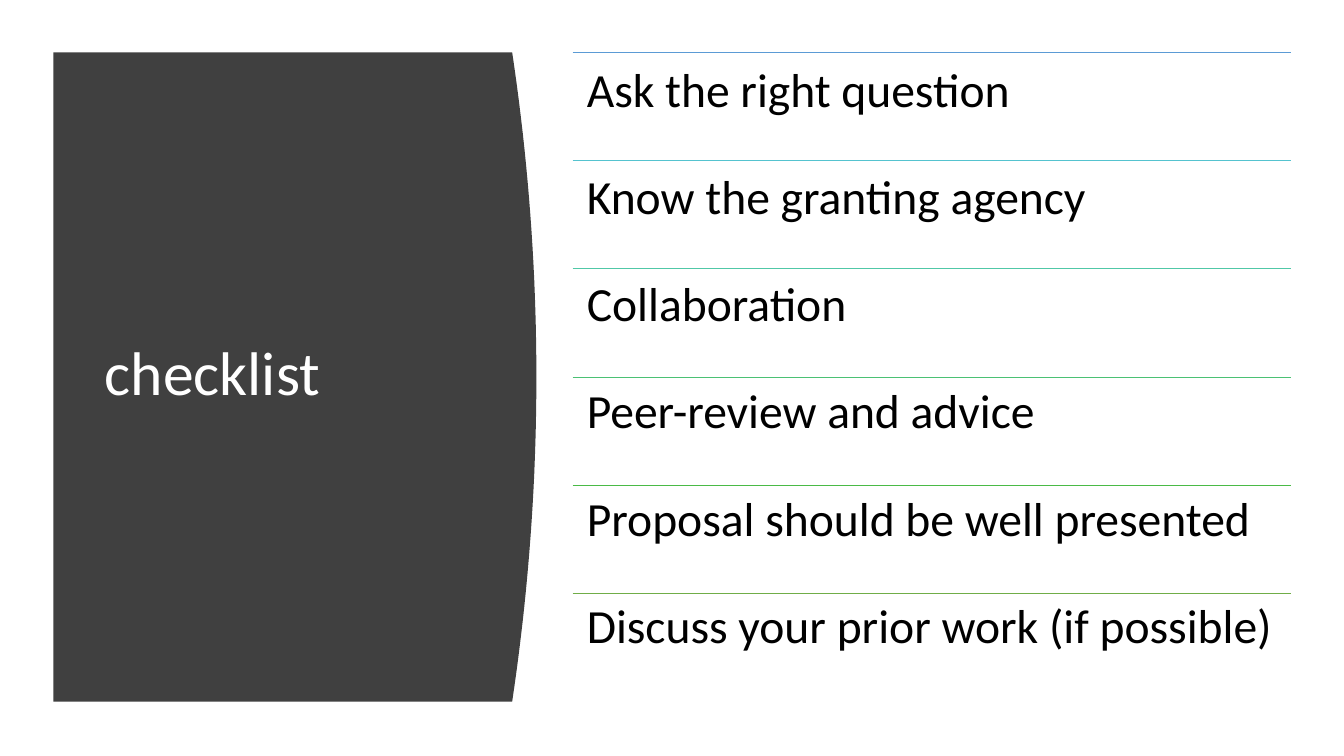
from dataclasses import dataclass

from lxml.etree import SubElement
from pptx import Presentation
from pptx.dml.color import RGBColor
from pptx.enum.shapes import MSO_CONNECTOR
from pptx.enum.text import MSO_ANCHOR, MSO_AUTO_SIZE, PP_ALIGN
from pptx.oxml.ns import qn
from pptx.shapes.placeholder import SlidePlaceholder
from pptx.slide import Slide
from pptx.text.text import _Paragraph as Paragraph
from pptx.util import Inches, Pt


@dataclass(frozen=True)
class Theme:
    font: str = "Calibri"
    panel: str = "404040"
    title: str = "FFFFFF"
    item: str = "000000"
    title_size: float = 44
    item_size: float = 34
    item_gap: float = 39.8
    rule_width: float = 0.5
    line_spacing: float = 0.9


@dataclass(frozen=True)
class Box:
    left: float
    top: float
    width: float
    height: float


@dataclass(frozen=True)
class Item:
    text: str
    rule_color: str


THEME = Theme()
PANEL = Box(0.53, 0.52, 4.79, 6.44)
TITLE = Box(0.94, 1.11, 3.74, 5.24)
CHECKLIST = Box(5.68, 0.52, 7.12, 6.44)
BULGE = 0.24
CURVE_STEPS = 40
ITEM_INSET = 0.14
ITEMS = [
    Item("Ask the right question", "5B9BD5"),
    Item("Know the granting agency", "55C3CF"),
    Item("Collaboration", "50C8A7"),
    Item("Peer-review and advice", "4BC174"),
    Item("Proposal should be well presented", "4ABA46"),
    Item("Discuss your prior work (if possible)", "70AD47"),
]


def draw_panel(slide: Slide) -> None:
    right = PANEL.left + PANEL.width
    bottom = PANEL.top + PANEL.height
    outline = [(PANEL.left, PANEL.top)]
    for step in range(CURVE_STEPS + 1):
        share = step / CURVE_STEPS
        inset = BULGE * (2 * share - 1) ** 2
        outline.append((right - inset, PANEL.top + PANEL.height * share))
    outline.append((PANEL.left, bottom))
    start, *corners = [(Inches(x), Inches(y)) for x, y in outline]
    builder = slide.shapes.build_freeform(*start)
    builder.add_line_segments(corners, close=True)
    panel = builder.convert_to_shape()
    panel.shadow.inherit = False
    panel.fill.solid()
    panel.fill.fore_color.rgb = RGBColor.from_string(THEME.panel)
    panel.line.fill.background()
    slide.shapes._spTree.insert(2, panel._element)


def place(placeholder: SlidePlaceholder, box: Box, anchor: MSO_ANCHOR) -> None:
    placeholder.left, placeholder.top = Inches(box.left), Inches(box.top)
    placeholder.width, placeholder.height = Inches(box.width), Inches(box.height)
    frame = placeholder.text_frame
    frame.word_wrap = True
    frame.auto_size = MSO_AUTO_SIZE.NONE
    frame.vertical_anchor = anchor


def write(paragraph: Paragraph, text: str, size: float, color: str) -> None:
    paragraph.alignment = PP_ALIGN.LEFT
    paragraph.line_spacing = THEME.line_spacing
    paragraph.space_before = Pt(0)
    run = paragraph.add_run()
    run.text = text
    run.font.name = THEME.font
    run.font.size = Pt(size)
    run.font.color.rgb = RGBColor.from_string(color)


def write_checklist(body: SlidePlaceholder) -> None:
    place(body, CHECKLIST, MSO_ANCHOR.TOP)
    frame = body.text_frame
    frame.margin_left = frame.margin_right = Inches(ITEM_INSET)
    frame.margin_top = frame.margin_bottom = Inches(ITEM_INSET)
    for index, item in enumerate(ITEMS):
        paragraph = frame.add_paragraph() if index else frame.paragraphs[0]
        write(paragraph, item.text, THEME.item_size, THEME.item)
        paragraph.space_after = Pt(THEME.item_gap)
        properties = paragraph._p.get_or_add_pPr()
        properties.set("marL", "0")
        properties.set("indent", "0")
        SubElement(properties, qn("a:buNone"))


def draw_rules(slide: Slide) -> None:
    pitch = CHECKLIST.height / len(ITEMS)
    left, right = Inches(CHECKLIST.left), Inches(CHECKLIST.left + CHECKLIST.width)
    for index, item in enumerate(ITEMS):
        y = Inches(CHECKLIST.top + index * pitch)
        rule = slide.shapes.add_connector(MSO_CONNECTOR.STRAIGHT, left, y, right, y)
        rule.line.color.rgb = RGBColor.from_string(item.rule_color)
        rule.line.width = Pt(THEME.rule_width)
        SubElement(rule._element.spPr, qn("a:effectLst"))


def main() -> None:
    deck = Presentation()
    deck.slide_width, deck.slide_height = Inches(13.33), Inches(7.5)
    slide = deck.slides.add_slide(deck.slide_layouts[1])
    draw_panel(slide)
    title = slide.shapes.title
    place(title, TITLE, MSO_ANCHOR.MIDDLE)
    write(title.text_frame.paragraphs[0], "checklist", THEME.title_size, THEME.title)
    write_checklist(slide.placeholders[1])
    draw_rules(slide)
    deck.save("out.pptx")


if __name__ == "__main__":
    main()
